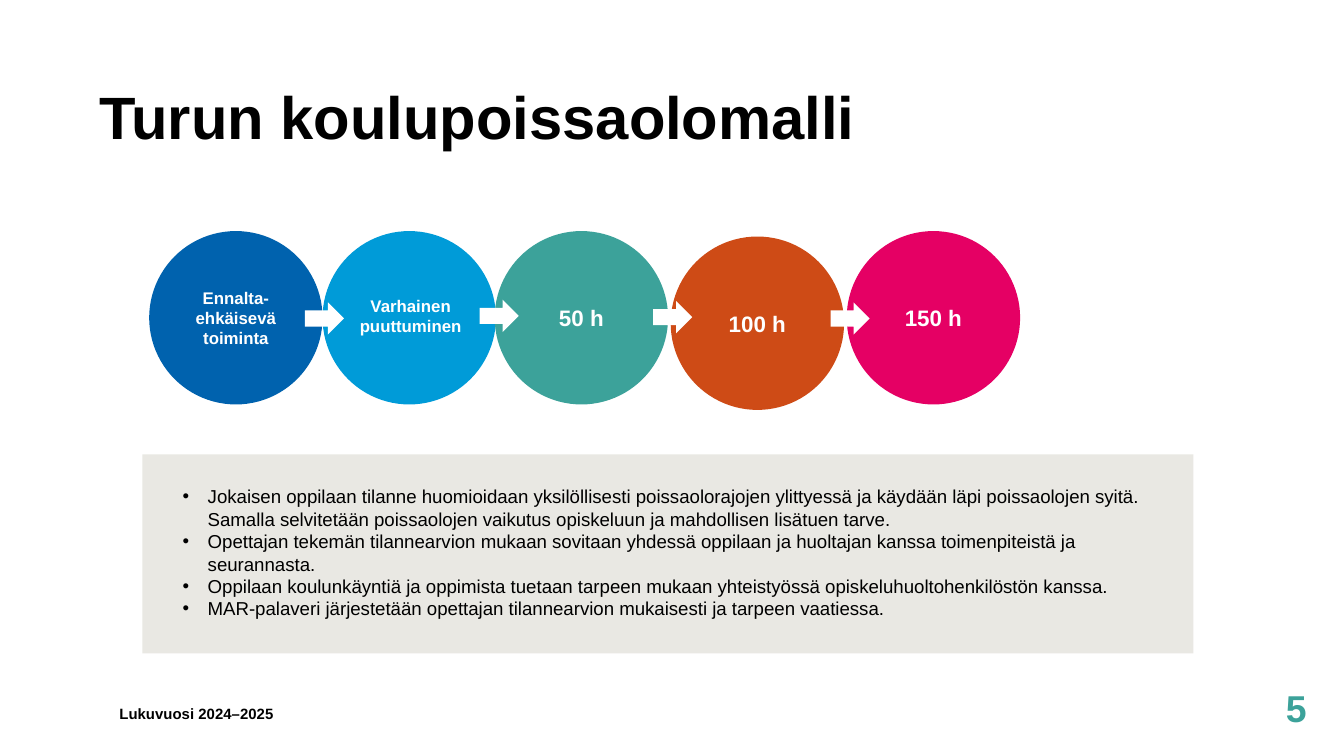
import pptx
import pptx.util
import pptx.dml.color
import pptx.enum.shapes
import pptx.enum.text
import pptx.oxml.ns
import lxml.etree

Pt = pptx.util.Pt
RGB = pptx.dml.color.RGBColor
KIND = pptx.enum.shapes.MSO_SHAPE
ALIGN = pptx.enum.text.PP_ALIGN
ANCHOR = pptx.enum.text.MSO_ANCHOR

BLACK = RGB(0, 0, 0)
WHITE = RGB(255, 255, 255)
NAVY = RGB(0x00, 0x62, 0xAE)
SKY = RGB(0x00, 0x9B, 0xD8)
TEAL = RGB(0x3C, 0xA2, 0x9A)
RUST = RGB(0xCE, 0x4B, 0x16)
PINK = RGB(0xE5, 0x00, 0x64)
SAND = RGB(0xE9, 0xE8, 0xE3)

DISC = 92.9
# left, top, fill, label, text size
STEPS = [
    (79.9, 123.8, NAVY, "Ennalta-ehkäisevä toiminta", 9),
    (172.8, 123.8, SKY, "", 9),
    (265, 123.8, TEAL, "50 h", 12),
    (359.3, 126.7, RUST, "100 h", 12),
    (453.6, 123.8, PINK, "150 h", 12),
]
ARROWS = [(163.4, 162), (257, 160.6), (349.9, 161.3), (445, 162)]
POINTS = [
    "Jokaisen oppilaan tilanne huomioidaan yksilöllisesti poissaolorajojen "
    "ylittyessä ja käydään läpi poissaolojen syitä. Samalla selvitetään "
    "poissaolojen vaikutus opiskeluun ja mahdollisen lisätuen tarve.",
    "Opettajan tekemän tilannearvion mukaan sovitaan yhdessä oppilaan ja "
    "huoltajan kanssa toimenpiteistä ja seurannasta.",
    "Oppilaan koulunkäyntiä ja oppimista tuetaan tarpeen mukaan yhteistyössä "
    "opiskeluhuoltohenkilöstön kanssa.",
    "MAR-palaveri järjestetään opettajan tilannearvion mukaisesti ja tarpeen "
    "vaatiessa.",
]


def style(frame, size, color, bold=True, align=ALIGN.LEFT):
    for para in frame.paragraphs:
        para.alignment = align
        for run in para.runs:
            font = run.font
            font.name = "Arial"
            font.size = Pt(size)
            font.bold = bold
            font.color.rgb = color


def add_title(slide, text):
    title = slide.shapes.title
    title.left, title.top = Pt(53.3), Pt(43.9)
    title.width, title.height = Pt(616.3), Pt(42.5)
    frame = title.text_frame
    frame.text = text
    frame.word_wrap = True
    frame.auto_size = pptx.enum.text.MSO_AUTO_SIZE.NONE
    frame.vertical_anchor = ANCHOR.MIDDLE
    frame.margin_left = frame.margin_right = 0
    frame.margin_top = frame.margin_bottom = 0
    frame.paragraphs[0].line_spacing = 0.85
    style(frame, 32, BLACK)


def add_shape(slide, kind, box, fill):
    shape = slide.shapes.add_shape(kind, *map(Pt, box))
    shape.shadow.inherit = False
    shape.fill.solid()
    shape.fill.fore_color.rgb = fill
    shape.line.fill.background()
    return shape


def add_disc(slide, left, top, fill, label, size):
    disc = add_shape(slide, KIND.OVAL, (left, top, DISC, DISC), fill)
    if label:
        frame = disc.text_frame
        frame.text = label
        frame.word_wrap = True
        frame.vertical_anchor = ANCHOR.MIDDLE
        style(frame, size, WHITE, align=ALIGN.CENTER)


def add_text(slide, box, text, size, color, wrap=True, **looks):
    frame = slide.shapes.add_textbox(*map(Pt, box)).text_frame
    frame.text = text
    frame.word_wrap = wrap
    style(frame, size, color, **looks)
    return frame


def add_bullets(frame, indent):
    for para in frame.paragraphs:
        props = para._p.get_or_add_pPr()
        props.set("marL", str(Pt(indent)))
        props.set("indent", str(-Pt(indent)))
        for tag, key, value in (("a:buFont", "typeface", "Arial"),
                                ("a:buChar", "char", "•")):
            name = pptx.oxml.ns.qn(tag)
            lxml.etree.SubElement(props, name).set(key, value)


def main():
    deck = pptx.Presentation()
    deck.slide_width, deck.slide_height = Pt(720), Pt(405)
    slide = deck.slides.add_slide(deck.slide_layouts[5])

    add_title(slide, "Turun koulupoissaolomalli")
    for step in STEPS:
        add_disc(slide, *step)
    add_text(slide, (168.5, 154.8, 103, 28.8), "Varhainen puuttuminen",
             9, WHITE, align=ALIGN.CENTER)
    for left, top in ARROWS:
        add_shape(slide, KIND.RIGHT_ARROW, (left, top, 20.9, 17.3), WHITE)

    add_shape(slide, KIND.RECTANGLE, (76.3, 243.4, 563, 106.6), SAND)
    notes = add_text(slide, (90.7, 256.3, 534.2, 79.9), "\n".join(POINTS),
                     10, BLACK, bold=False)
    add_bullets(notes, 13.5)

    add_text(slide, (56.9, 373.7, 98.6, 17.3), "Lukuvuosi 2024–2025", 8, BLACK)
    add_text(slide, (681.8, 363.6, 25.9, 31.7), "5", 20, TEAL, wrap=False)
    deck.save("out.pptx")


if __name__ == "__main__":
    main()
